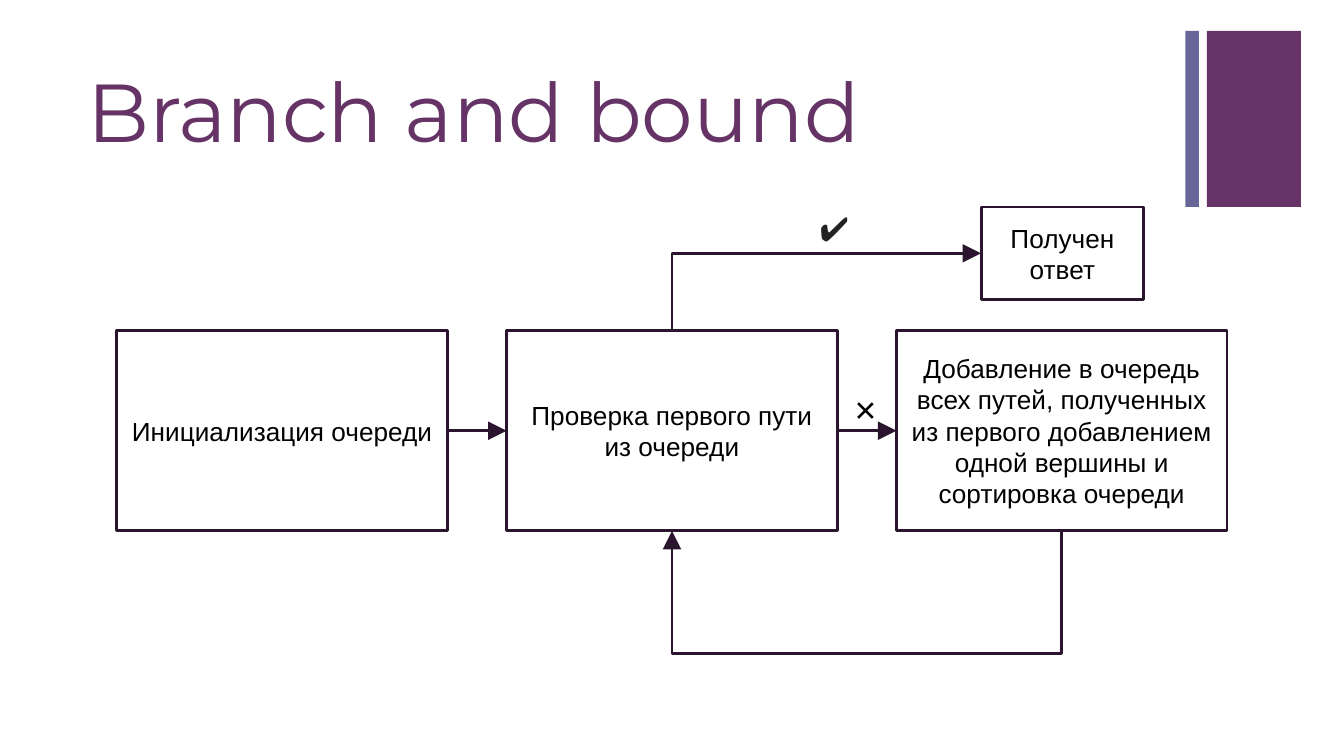
from lxml.etree import SubElement
from pptx import Presentation
from pptx.dml.color import RGBColor
from pptx.enum.shapes import MSO_CONNECTOR as Link, MSO_SHAPE as Shape
from pptx.enum.text import MSO_ANCHOR as Anchor, PP_ALIGN as Align
from pptx.oxml.ns import qn
from pptx.util import Emu, Inches, Pt

PLUM = RGBColor(0x66, 0x33, 0x66)
SLATE = RGBColor(0x66, 0x66, 0x99)
OUTLINE = RGBColor(0x2B, 0x14, 0x2D)
WHITE = RGBColor(0xFF, 0xFF, 0xFF)
BLACK = RGBColor(0, 0, 0)
CHARCOAL = RGBColor(0x22, 0x22, 0x22)

STEP_LEFT, STEP_PITCH = 0.87, 2.9
STEP_TOP, STEP_WIDTH, STEP_HEIGHT = 2.46, 2.46, 1.49
MIN_RISE = Emu(600)
TOP, LEFT, BOTTOM, RIGHT = range(4)
STEPS = [
    ["Инициализация очереди"],
    ["Проверка первого пути из очереди"],
    ["Добавление в очередь всех путей, полученных из первого добавлением одной вершины и",
     "сортировка очереди"],
]


def write(holder, lines, size, color, font="Arial", align=Align.LEFT, anchor=Anchor.TOP, spacing=None):
    frame = holder.text_frame
    frame.word_wrap = True
    frame.vertical_anchor = anchor
    frame.margin_left = frame.margin_right = Inches(0.1)
    frame.margin_top = frame.margin_bottom = Inches(0.1)
    for index, line in enumerate(lines):
        paragraph = frame.add_paragraph() if index else frame.paragraphs[0]
        paragraph.alignment = align
        paragraph.line_spacing = spacing
        run = paragraph.add_run()
        run.text = line
        run.font.size = Pt(size)
        run.font.name = font
        run.font.color.rgb = color


def add_label(slide, box, text, size, color, **style):
    label = slide.shapes.add_textbox(*map(Inches, box))
    write(label, [text], size, color, **style)


def add_block(slide, box, fill):
    block = slide.shapes.add_shape(Shape.RECTANGLE, *map(Inches, box))
    block.shadow.inherit = False
    block.fill.solid()
    block.fill.fore_color.rgb = fill
    block.line.fill.background()
    return block


def add_step(slide, box, lines):
    step = add_block(slide, box, WHITE)
    step.line.color.rgb = OUTLINE
    step.line.width = Pt(1.5)
    write(step, lines, 14, BLACK, align=Align.CENTER, anchor=Anchor.MIDDLE)
    return step


def add_arrow(slide, kind, source, source_side, target, target_side):
    arrow = slide.shapes.add_connector(kind, 0, 0, 0, 0)
    arrow.line.color.rgb = OUTLINE
    arrow.line.width = Pt(1.5)
    SubElement(arrow.line._get_or_add_ln(), qn("a:tailEnd"), type="triangle", w="lg", len="lg")
    SubElement(arrow.element.spPr, qn("a:effectLst"))
    arrow.begin_connect(source, source_side)
    arrow.end_connect(target, target_side)
    return arrow


def add_elbow(slide, source, source_side, target, target_side, preset, turn, drop=None):
    elbow = add_arrow(slide, Link.ELBOW, source, source_side, target, target_side)
    x1, y1, x2, y2 = elbow.begin_x, elbow.begin_y, elbow.end_x, elbow.end_y
    run, rise = abs(x2 - x1), max(abs(y2 - y1), MIN_RISE)
    elbow.left, elbow.top = Emu((x1 + x2 - rise) // 2), Emu((y1 + y2 - run) // 2)
    elbow.width, elbow.height = Emu(rise), Emu(run)
    properties = elbow.element.spPr
    transform = properties.find(qn("a:xfrm"))
    for flip in ("flipH", "flipV"):
        transform.attrib.pop(flip, None)
    transform.set("rot", str(turn * 60000))
    geometry = properties.find(qn("a:prstGeom"))
    geometry.set("prst", preset)
    if drop:
        bend = round(Inches(drop) / rise * 100000)
        SubElement(geometry.find(qn("a:avLst")), qn("a:gd"), name="adj1", fmla=f"val {bend}")


def main():
    deck = Presentation()
    deck.slide_width, deck.slide_height = Inches(10), Inches(10 * 9 / 16)
    slide = deck.slides.add_slide(deck.slide_layouts[6])

    add_block(slide, (8.98, 0.23, 0.7, 1.31), PLUM)
    add_block(slide, (8.82, 0.23, 0.1, 1.31), SLATE)
    add_label(slide, (0.55, 0.4, 8.26, 0.92), "Branch and bound", 44, PLUM,
              font="Montserrat", anchor=Anchor.MIDDLE, spacing=0.9)

    start, check, queue = [
        add_step(slide, (STEP_LEFT + column * STEP_PITCH, STEP_TOP, STEP_WIDTH, STEP_HEIGHT), lines)
        for column, lines in enumerate(STEPS)
    ]
    answer = add_step(slide, (7.3, 1.54, 1.21, 0.69), ["Получен ответ"])

    add_elbow(slide, queue, BOTTOM, check, BOTTOM, "bentConnector3", 90, drop=0.76)
    for source, target in ((start, check), (check, queue)):
        add_arrow(slide, Link.STRAIGHT, source, RIGHT, target, LEFT)
    add_elbow(slide, check, TOP, answer, LEFT, "bentConnector2", 270)

    add_label(slide, (6, 1.45, 0.57, 0.29), "✔", 18, CHARCOAL)
    add_label(slide, (6.26, 2.77, 0.78, 0.38), "×", 20, BLACK)
    deck.save("out.pptx")


if __name__ == "__main__":
    main()
